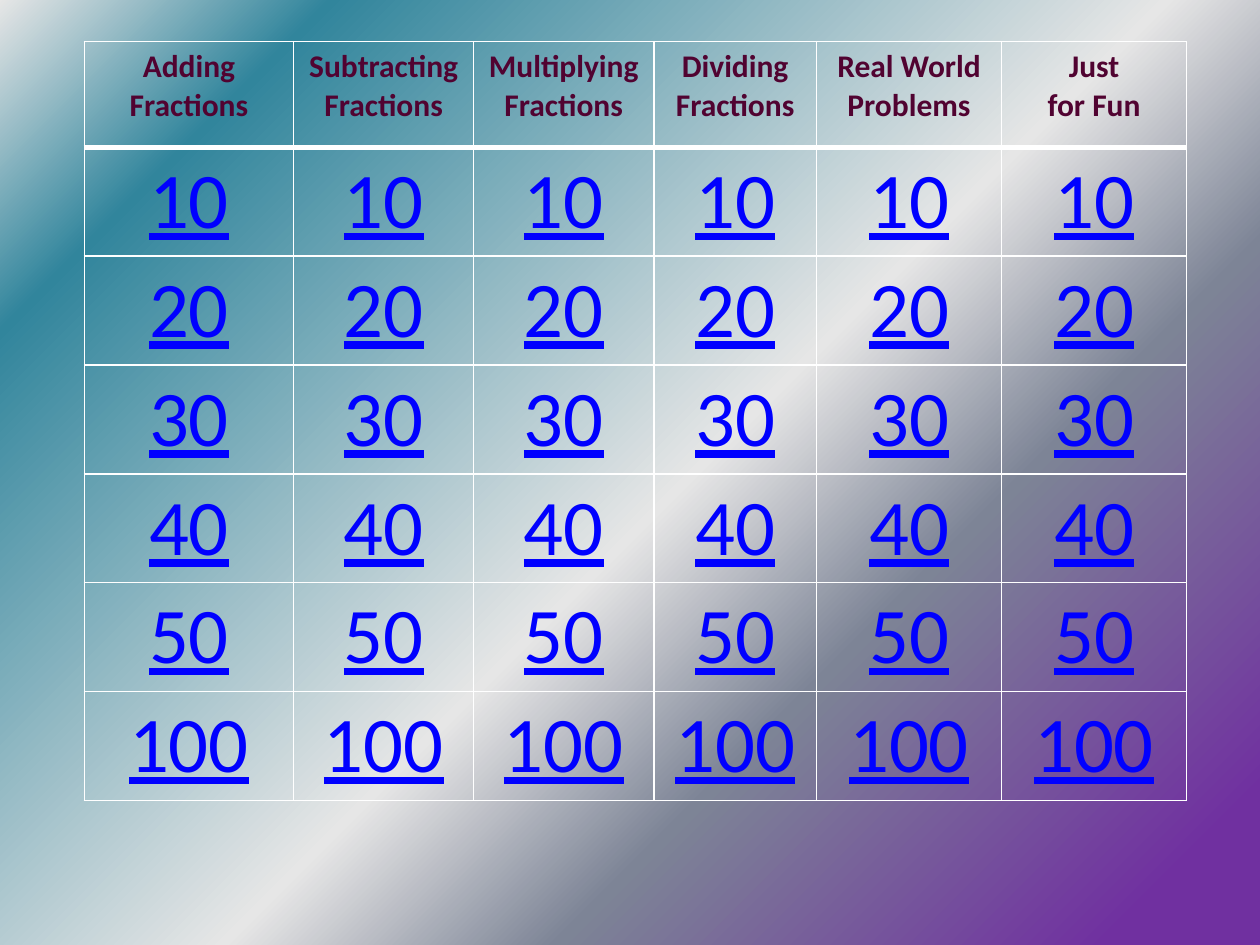
from lxml.etree import SubElement as Sub
from pptx import Presentation
from pptx.dml.color import RGBColor
from pptx.enum.text import PP_ALIGN
from pptx.oxml import parse_xml
from pptx.oxml.ns import nsdecls, qn
from pptx.util import Cm, Pt

HEADS = ["Adding Fractions", "Subtracting Fractions", "Multiplying Fractions",
         "Dividing Fractions", "Real World Problems", "Just\nfor Fun"]
POINTS = [10, 20, 30, 40, 50, 100]
WIDTHS = [4.22, 3.63, 3.63, 3.28, 3.73, 3.73]
STOPS = [(0, "7030A0"), (7, "7030A0"), (32, "7D8496"),
         (47, "E6E6E6"), (85, "31859C"), (100, "E6E6E6")]


def rgb(code):
    """Turn a hex string into a colour."""
    return RGBColor.from_string(code)


def paint_back(slide):
    """Fill the background with a gradient centred on the lower right corner."""
    stops = "".join(f'<a:gs pos="{pos * 1000}"><a:srgbClr val="{code}"/></a:gs>'
                    for pos, code in STOPS)
    back = parse_xml(
        f'<p:bg {nsdecls("p", "a")}><p:bgPr><a:gradFill rotWithShape="1">'
        f'<a:gsLst>{stops}</a:gsLst><a:path path="circle">'
        '<a:fillToRect l="100000" t="100000"/></a:path>'
        '<a:tileRect r="-100000" b="-100000"/></a:gradFill>'
        '<a:effectLst/></p:bgPr></p:bg>')
    slide.element.cSld.insert(0, back)


def rule_cell(cell, top, base):
    """Draw white borders around a cell, with the given top and base widths."""
    props = cell._tc.get_or_add_tcPr()
    sides = [("L", 1), ("R", 1), ("T", top), ("B", base)]
    for spot, (side, width) in enumerate(sides):
        line = Sub(props, qn(f"a:ln{side}"), w=str(Pt(width)))
        fill = Sub(line, qn("a:solidFill"))
        Sub(fill, qn("a:srgbClr"), val="FFFFFF")
        props.insert(spot, line)


def fill_cell(cell, text, size, code, head):
    """Write centred text in a clear cell."""
    cell.fill.background()
    cell.text_frame.text = text
    for para in cell.text_frame.paragraphs:
        para.alignment = PP_ALIGN.CENTER
        for run in para.runs:
            font = run.font
            font.name, font.size = "Calibri", Pt(size)
            font.bold, font.underline = head, not head
            font.color.rgb = rgb(code)


def add_board(slide, left, top, width, height):
    """Place the game board of topics and points in the given box."""
    frame = slide.shapes.add_table(len(POINTS) + 1, len(HEADS),
                                   Cm(left), Cm(top), Cm(width), Cm(height))
    table = frame.table
    table.first_row = table.horz_banding = False
    for col, wide in zip(table.columns, WIDTHS):
        col.width = Cm(wide)
    for num, row in enumerate(table.rows):
        row.height = Cm(1.8 if num else 2.13)
        for cell, head in zip(row.cells, HEADS):
            if num:
                fill_cell(cell, str(POINTS[num - 1]), 45, "0000FF", False)
            else:
                fill_cell(cell, head, 18, "510331", True)
            rule_cell(cell, 3 if num == 1 else 1, 1 if num else 3)
    frame.height = Cm(height)


def main():
    """Build and save the slide."""
    deck = Presentation()
    deck.slide_width, deck.slide_height = Cm(25.4), Cm(19.05)
    slide = deck.slides.add_slide(deck.slide_layouts[6])
    paint_back(slide)
    add_board(slide, 1.7, 0.84, sum(WIDTHS), 15.09)
    deck.save("out.pptx")


if __name__ == "__main__":
    main()
